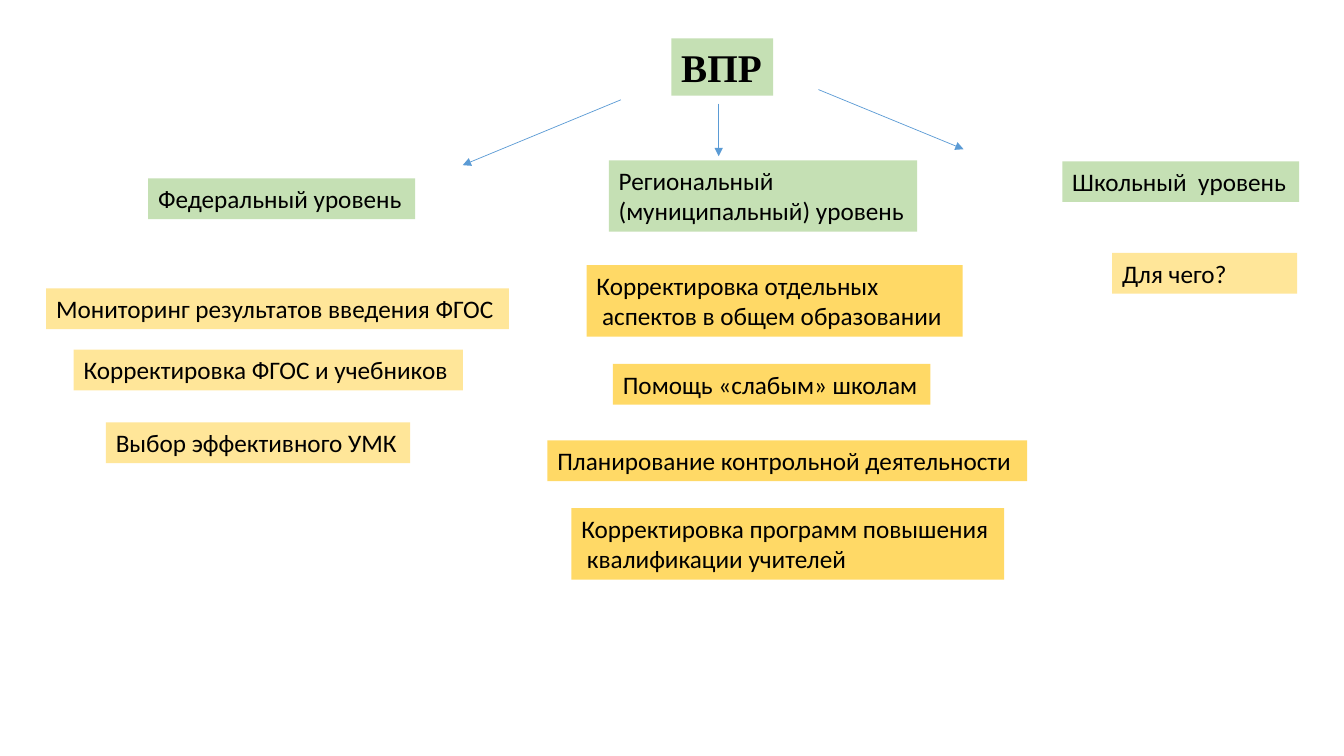
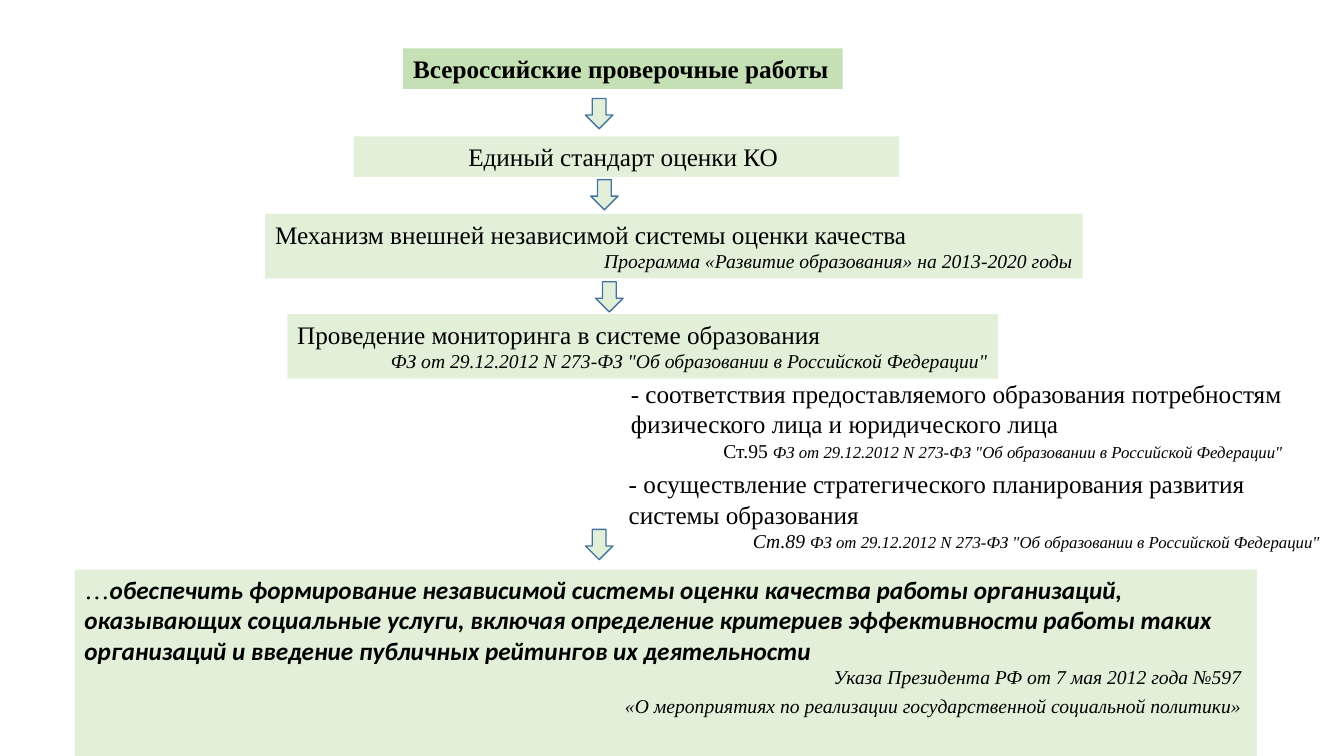
from dataclasses import dataclass

from lxml.etree import SubElement
from pptx import Presentation
from pptx.dml.color import RGBColor
from pptx.enum.shapes import MSO_CONNECTOR as Line, MSO_SHAPE as Shape
from pptx.enum.text import MSO_ANCHOR as Anchor, PP_ALIGN as Align
from pptx.oxml.ns import qn
from pptx.util import Pt

SANS, SERIF = "Calibri", "Times New Roman"
GREEN, PALE_GREEN = "C5E0B4", "E2F0D9"
GOLD, PALE_GOLD = "FFD966", "FFE699"
BLUE, DARK_BLUE, BLACK = "5B9BD5", "43739E", "000000"
LAW = 'ФЗ от 29.12.2012 N 273-ФЗ "Об образовании в Российской Федерации"'


def color(value):
    """Turn a hex string into a colour."""
    return RGBColor.from_string(value)


@dataclass
class Span:
    """A stretch of text in one style."""
    text: str
    size: float = 18
    font: str = SERIF
    bold: bool = False
    italic: bool = False


@dataclass
class Para:
    """A paragraph of spans with its layout."""
    spans: list
    align: Align = Align.LEFT
    before: float = 0
    indent: float = 0


def plain(text, align=Align.LEFT, **style):
    """Make a paragraph with a single span."""
    return Para([Span(text, **style)], align)


def source(text):
    """Make a right-aligned italic reference."""
    return plain(text, Align.RIGHT, size=14, italic=True)


class Deck:
    """Presentation with a shared style and a current slide."""

    def __init__(self):
        """Open a wide presentation."""
        self.show = Presentation()
        self.show.slide_width, self.show.slide_height = Pt(960), Pt(540)

    def new_slide(self):
        """Start a blank slide."""
        self.shapes = self.show.slides.add_slide(self.show.slide_layouts[6]).shapes

    def set_paragraphs(self, frame, paras, right_inset=7.2):
        """Fill a text frame with paragraphs."""
        frame.word_wrap = True
        frame.vertical_anchor = Anchor.TOP
        frame.margin_right = Pt(right_inset)
        for index, para in enumerate(paras):
            line = frame.add_paragraph() if index else frame.paragraphs[0]
            line.alignment = para.align
            if para.before:
                line.space_before = Pt(para.before)
            if para.indent:
                line._p.get_or_add_pPr().set("marL", str(Pt(para.indent)))
            for span in para.spans:
                run = line.add_run()
                run.text = span.text
                run.font.name, run.font.size = span.font, Pt(span.size)
                run.font.bold, run.font.italic = span.bold, span.italic
                run.font.color.rgb = color(BLACK)

    def solid(self, kind, place, fill):
        """Add a filled preset shape without an outline."""
        shape = self.shapes.add_shape(kind, *map(Pt, place))
        shape.shadow.inherit = False
        shape.fill.solid()
        shape.fill.fore_color.rgb = color(fill)
        shape.line.fill.background()
        return shape

    def panel(self, place, fill, *paras, right_inset=7.2):
        """Add a filled box with text."""
        box = self.solid(Shape.RECTANGLE, place, fill)
        self.set_paragraphs(box.text_frame, paras, right_inset)

    def label(self, left, top, width, fill, *lines):
        """Add a box as high as its lines, with later lines indented on gold."""
        paras = [plain(text, font=SANS) for text in lines]
        if fill == GOLD:
            for para in paras[1:]:
                para.indent = 4
        self.panel((left, top, width, 7.2 + 21.9 * len(lines)), fill, *paras)

    def note(self, place, *paras):
        """Add text without a background."""
        self.set_paragraphs(self.shapes.add_textbox(*map(Pt, place)).text_frame, paras)

    def block_arrow(self, left, top):
        """Add a small block arrow pointing down."""
        arrow = self.solid(Shape.DOWN_ARROW, (left, top, 19.6, 21.6), PALE_GREEN)
        arrow.line.color.rgb = color(DARK_BLUE)
        arrow.line.width = Pt(1)

    def thin_arrow(self, *ends):
        """Add a thin line with an arrowhead at its end."""
        arrow = self.shapes.add_connector(Line.STRAIGHT, *map(Pt, ends))
        arrow.line.color.rgb = color(BLUE)
        arrow.line.width = Pt(0.5)
        properties = arrow._element.spPr
        SubElement(properties.find(qn("a:ln")), qn("a:tailEnd"), type="triangle")
        SubElement(properties, qn("a:effectLst"))


def levels_slide(deck):
    """Build the slide on the three levels of use."""
    deck.new_slide()
    deck.panel((479.5, 27.4, 72.7, 41), GREEN, plain("ВПР", size=28, bold=True))
    for ends in ((443.5, 71.3, 330.5, 118), (584.6, 64, 688.3, 106.6), (513.4, 74, 513.4, 111.6)):
        deck.thin_arrow(*ends)
    for left, top, width, fill, *lines in (
        (105.8, 127.4, 190.8, GREEN, "Федеральный уровень"),
        (33, 206, 330.5, PALE_GOLD, "Мониторинг результатов введения ФГОС"),
        (52.6, 249.8, 278, PALE_GOLD, "Корректировка ФГОС и учебников"),
        (75.6, 301.7, 217.4, PALE_GOLD, "Выбор эффективного УМК"),
        (434.9, 114.5, 220.3, GREEN, "Региональный", "(муниципальный) уровень"),
        (419, 189.4, 268.6, GOLD, "Корректировка отдельных", "аспектов в общем образовании"),
        (437.8, 260, 226.8, GOLD, "Помощь «слабым» школам"),
        (391, 314.6, 342.7, GOLD, "Планирование контрольной деятельности"),
        (408.2, 363, 309, GOLD, "Корректировка программ повышения", "квалификации учителей"),
        (758.8, 115.2, 169.2, GREEN, "Школьный  уровень"),
        (794.4, 180.7, 132.2, PALE_GOLD, "Для чего?"),
    ):
        deck.label(left, top, width, fill, *lines)


def grounds_slide(deck):
    """Build the slide on the legal grounds."""
    deck.new_slide()
    deck.panel((288, 34.5, 314, 29), GREEN, plain("Всероссийские проверочные работы", bold=True))
    deck.panel((252.7, 97.4, 389.5, 29), PALE_GREEN,
               plain("Единый стандарт оценки КО", Align.CENTER), right_inset=11.7)
    deck.panel((189.4, 152.8, 584, 46), PALE_GREEN,
               plain("Механизм внешней независимой системы оценки качества"),
               source("Программа «Развитие образования» на 2013-2020 годы"))
    deck.panel((205.2, 224.4, 507.6, 46), PALE_GREEN,
               plain("Проведение мониторинга в системе образования"), source(LAW))
    for place, aim, article, slanted in (
        ((443.5, 266.4, 480.2, 90),
         "- соответствия предоставляемого образования потребностям физического лица и юридического лица",
         "Ст.95 ", False),
        ((442, 331.2, 508.3, 85),
         "- осуществление стратегического планирования развития системы образования",
         "Ст.89 ", True),
    ):
        deck.note(place, plain(aim), Para(
            [Span(article, 14, italic=slanted), Span(LAW, 12, italic=True)], Align.RIGHT))
    policy = source("«О мероприятиях по реализации государственной социальной политики»")
    policy.before = 4
    deck.panel((53.3, 406.8, 844.6, 133.2), PALE_GREEN,
               Para([Span("…"), Span(
                   "обеспечить формирование независимой системы оценки качества работы организаций, "
                   "оказывающих социальные услуги, включая определение критериев эффективности работы "
                   "таких организаций и введение публичных рейтингов их деятельности",
                   font=SANS, bold=True, italic=True)]),
               source("Указа Президента РФ от 7 мая 2012 года №597"), policy, right_inset=11)
    for left, top in ((418.2, 70.4), (421.9, 128.3), (425.5, 201.3), (418.2, 378.2)):
        deck.block_arrow(left, top)


def main():
    """Build and save the presentation."""
    deck = Deck()
    levels_slide(deck)
    grounds_slide(deck)
    deck.show.save("out.pptx")


if __name__ == "__main__":
    main()
